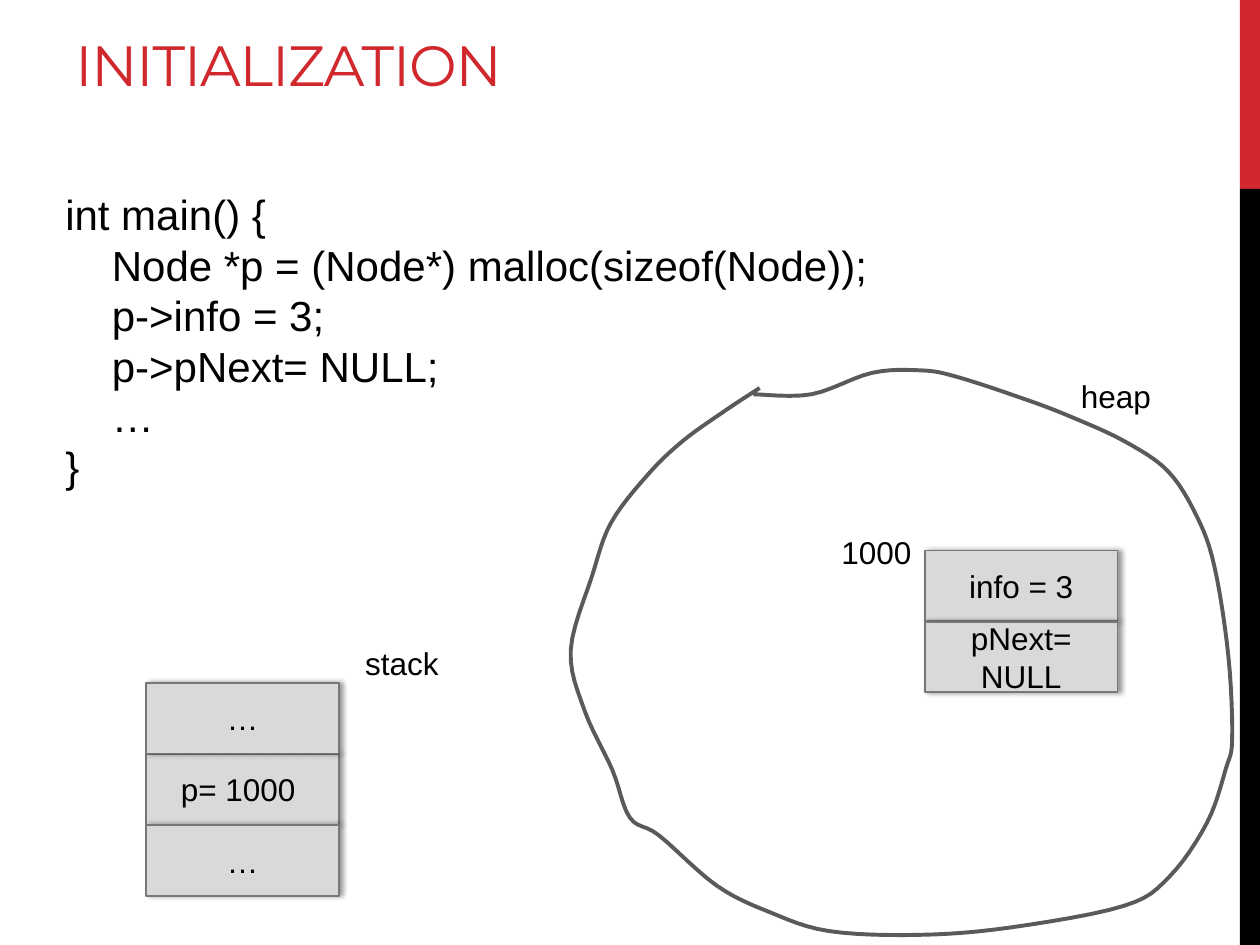
from dataclasses import dataclass
from itertools import pairwise

from lxml import etree
from pptx import Presentation
from pptx.dml.color import RGBColor
from pptx.enum.shapes import MSO_SHAPE
from pptx.enum.text import MSO_ANCHOR, MSO_AUTO_SIZE, PP_ALIGN
from pptx.oxml.ns import qn
from pptx.util import Inches, Pt

RECTANGLE = MSO_SHAPE.RECTANGLE
MIDDLE, BOTTOM = MSO_ANCHOR.MIDDLE, MSO_ANCHOR.BOTTOM
CENTER = PP_ALIGN.CENTER
GROW = MSO_AUTO_SIZE.SHAPE_TO_FIT_TEXT

COLORS = {
    "accent": "D1282E",
    "black": "000000",
    "cell": "D9D9D9",
    "cell_border": "777777",
    "outline": "5A5A5A",
}
CELL_WIDTH, CELL_HEIGHT, CELL_PITCH = 1.53, 0.56, 0.565
CURVE_STEPS = 6

HEAP_OUTLINE = [
    (6.03, 3.08), (5.77, 3.25), (5.42, 3.5), (5.14, 3.77), (4.85, 4.15),
    (4.7, 4.57), (4.53, 5.16), (4.64, 5.64), (4.86, 6.11), (5, 6.49),
    (5.23, 6.63), (5.69, 7.03), (6.11, 7.24), (6.58, 7.39), (7.3, 7.42),
    (8.03, 7.36), (8.92, 7.19), (9.28, 6.96), (9.58, 6.53), (9.73, 6.1),
    (9.78, 5.86), (9.75, 5.21), (9.64, 4.5), (9.5, 4.1), (9.27, 3.74),
    (8.92, 3.5), (8.48, 3.3), (8.11, 3.16), (7.59, 2.99), (7.31, 2.94),
    (6.92, 2.96), (6.44, 3.13), (5.98, 3.13),
]


@dataclass(frozen=True)
class Label:
    text: str
    left: float
    top: float
    width: float


@dataclass(frozen=True)
class Bar:
    top: float
    height: float
    color: str


@dataclass(frozen=True)
class Cell:
    text: str
    row: int


@dataclass(frozen=True)
class MemoryBlock:
    left: float
    top: float
    cells: tuple[Cell, ...]


BARS = [Bar(0, 1.5, "accent"), Bar(1.5, 6, "black")]
LABELS = [
    Label("heap", 8.48, 2.94, 0.76),
    Label("1000", 6.58, 4.18, 0.76),
    Label("stack", 2.8, 5.06, 0.79),
]
NODE = MemoryBlock(7.34, 4.37, (Cell("info = 3", 0), Cell("pNext= NULL", 1)))
STACK = MemoryBlock(1.16, 5.42, (Cell("p= 1000 ", 1), Cell("…", 0), Cell("…", 2)))
CODE = [
    "int main() {",
    "    Node *p = (Node*) malloc(sizeof(Node));",
    "    p->info = 3;",
    "    p->pNext= NULL;",
    "    …",
    "}",
]


def rgb(name: str) -> RGBColor:
    return RGBColor.from_string(COLORS[name])


def add_run(paragraph, text: str, size: float, font: str = "Arial", color: str = "black"):
    run = paragraph.add_run()
    run.text = text
    run.font.size = Pt(size)
    run.font.name = font
    run.font.color.rgb = rgb(color)
    return run


def add_lines(slide, lines: list[str], left: float, top: float, width: float,
              height: float, size: float) -> None:
    box = slide.shapes.add_textbox(Inches(left), Inches(top), Inches(width), Inches(height))
    frame = box.text_frame
    frame.word_wrap = False
    frame.auto_size = GROW
    for index, line in enumerate(lines):
        paragraph = frame.add_paragraph() if index else frame.paragraphs[0]
        add_run(paragraph, line, size)


def add_title(slide, text: str) -> None:
    box = slide.shapes.add_textbox(Inches(0.5), Inches(0.17), Inches(9.02), Inches(0.66))
    frame = box.text_frame
    frame.word_wrap = True
    frame.vertical_anchor = BOTTOM
    run = add_run(frame.paragraphs[0], text, 32.4, "Montserrat", "accent")
    run.font._element.set("spc", "-60")


def add_rectangle(slide, left: float, top: float, width: float, height: float, color: str):
    shape = slide.shapes.add_shape(
        RECTANGLE, Inches(left), Inches(top), Inches(width), Inches(height))
    shape.shadow.inherit = False
    shape.fill.solid()
    shape.fill.fore_color.rgb = rgb(color)
    shape.line.fill.background()
    return shape


def add_soft_shadow(shape) -> None:
    effects = shape._element.spPr.find(qn("a:effectLst"))
    shadow = etree.SubElement(
        effects, qn("a:outerShdw"), blurRad=str(Pt(3.1)), dist=str(Pt(1.8)), dir="0",
        algn="ctr", rotWithShape="0")
    tint = etree.SubElement(shadow, qn("a:srgbClr"), val=COLORS["black"])
    etree.SubElement(tint, qn("a:alpha"), val="40000")


def add_memory_block(slide, block: MemoryBlock) -> None:
    for cell in block.cells:
        top = block.top + cell.row * CELL_PITCH
        shape = add_rectangle(slide, block.left, top, CELL_WIDTH, CELL_HEIGHT, "cell")
        shape.line.color.rgb = rgb("cell_border")
        shape.line.width = Pt(1)
        add_soft_shadow(shape)
        frame = shape.text_frame
        frame.word_wrap = True
        frame.vertical_anchor = MIDDLE
        frame.paragraphs[0].alignment = CENTER
        add_run(frame.paragraphs[0], cell.text, 18)


def spline(before: float, start: float, end: float, after: float, t: float) -> float:
    return start + t / 2 * (
        end - before
        + t * (2 * before - 5 * start + 4 * end - after)
        + t * t * (3 * (start - end) + after - before))


def smooth_curve(knots: list[tuple[float, float]]) -> list[tuple[float, float]]:
    padded = [knots[0], *knots, knots[-1]]
    curve = [knots[0]]
    for index, _ in enumerate(pairwise(knots)):
        xs, ys = zip(*padded[index:index + 4])
        for step in range(1, CURVE_STEPS + 1):
            t = step / CURVE_STEPS
            curve.append((spline(*xs, t), spline(*ys, t)))
    return curve


def add_heap_outline(slide, knots: list[tuple[float, float]]) -> None:
    points = [(Inches(x), Inches(y)) for x, y in smooth_curve(knots)]
    builder = slide.shapes.build_freeform(*points[0])
    builder.add_line_segments(points[1:], close=False)
    outline = builder.convert_to_shape()
    outline.shadow.inherit = False
    outline.fill.background()
    outline.line.color.rgb = rgb("outline")
    outline.line.width = Pt(2.25)


def main() -> None:
    presentation = Presentation()
    presentation.slide_width = Inches(10)
    presentation.slide_height = Inches(7.5)
    slide = presentation.slides.add_slide(presentation.slide_layouts[6])

    for bar in BARS:
        add_rectangle(slide, 9.84, bar.top, 0.16, bar.height, bar.color)
    add_title(slide, "INITIALIZATION")
    add_lines(slide, CODE, 0.42, 1.45, 6.63, 2.52, 24)
    add_heap_outline(slide, HEAP_OUTLINE)
    for block in (NODE, STACK):
        add_memory_block(slide, block)
    for label in LABELS:
        add_lines(slide, [label.text], label.left, label.top, label.width, 0.4, 18)

    presentation.save("out.pptx")


if __name__ == "__main__":
    main()
